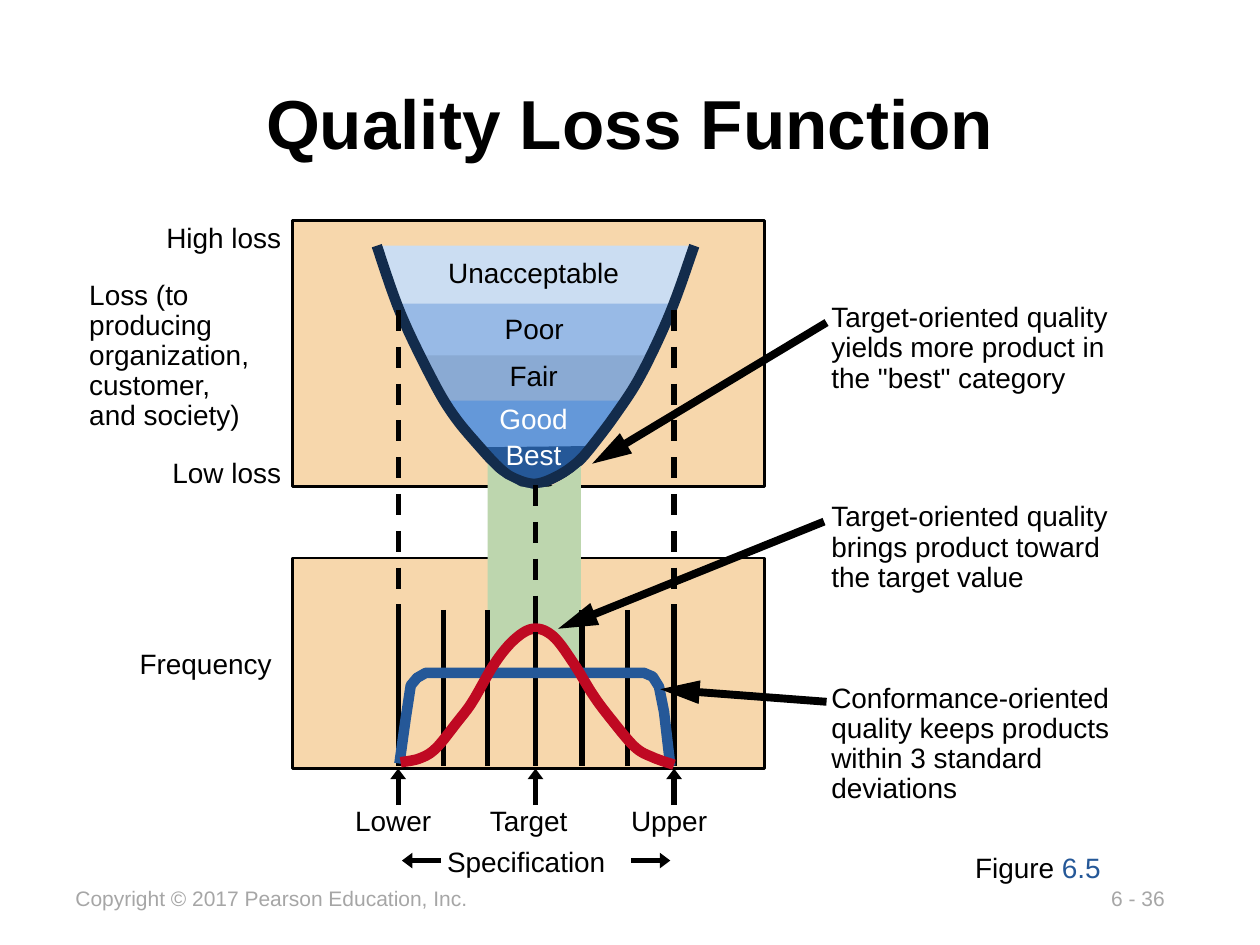
from lxml import etree
from pptx import Presentation
from pptx import util as u
from pptx.dml.color import RGBColor
from pptx.enum import dml, shapes, text
from pptx.oxml.ns import qn

SCALE = 9144  # EMU per px, 100 px to the inch
FONT = "Arial"

BLACK = RGBColor(0x00, 0x00, 0x00)
WHITE = RGBColor(0xFF, 0xFF, 0xFF)
GREY = RGBColor(0xA6, 0xA6, 0xA6)
SAND = RGBColor(0xF7, 0xD7, 0xAC)
GREEN = RGBColor(0xBD, 0xD6, 0xAE)
NAVY = RGBColor(0x13, 0x2C, 0x4C)
BLUE = RGBColor(0x25, 0x58, 0x98)
RED = RGBColor(0xBF, 0x09, 0x22)

LEFT, CENTER, RIGHT = text.PP_ALIGN.LEFT, text.PP_ALIGN.CENTER, text.PP_ALIGN.RIGHT

TITLE = ("Quality Loss Function", (75, 58, 850, 78))
LOSS_PANEL = (232, 175, 375, 211)
FREQUENCY_PANEL = (232, 443, 375, 167)

# label, label colour, label box, band colour, outline
BANDS = [
    ("Unacceptable", BLACK, (345, 198, 157, 37), RGBColor(0xCB, 0xDD, 0xF2),
     [(300, 195), (551, 195), (535, 242), (314, 242)]),
    ("Poor", BLACK, (390, 242, 68, 37), RGBColor(0x98, 0xBA, 0xE6),
     [(315, 241), (535, 241), (516, 284), (335, 284)]),
    ("Fair", BLACK, (393, 280, 61, 37), RGBColor(0x8A, 0xAA, 0xD3),
     [(333, 282), (519, 282), (495, 321), (355, 321)]),
    ("Good", WHITE, (386, 314, 75, 37), RGBColor(0x64, 0x98, 0xD9),
     [(355, 318), (496, 318), (468, 357), (382, 357)]),
    ("Best", WHITE, (391, 342, 65, 37), BLUE,
     [(383, 355), (396, 371), (412, 382), (425, 384), (443, 379), (460, 366),
      (470, 354)]),
]
LOSS_CURVE = [(299, 195), (318, 249), (344, 303), (361, 331), (381, 355),
              (397, 372), (409, 380), (425, 384), (442, 378), (457, 368),
              (469, 355), (490, 327), (509, 297), (532, 248), (551, 195)]
BEST_COLUMN = [(387, 368), (387, 533), (406, 510), (418, 498), (425, 499),
               (441, 507), (450, 521), (461, 535), (461, 370), (455, 375),
               (449, 379), (444, 382), (437, 386), (430, 387), (423, 388),
               (413, 386), (401, 380), (394, 375)]
CONFORMANCE_CURVE = [(317, 606), (322, 570), (326, 544), (331, 538), (338, 534),
                     (511, 534), (518, 537), (523, 545), (527, 565), (532, 608)]
TARGET_CURVE = [(318, 605), (333, 602), (346, 594), (363, 573), (375, 557),
                (393, 526), (409, 507), (424, 499), (439, 505), (455, 526),
                (471, 552), (486, 572), (504, 593), (518, 601), (535, 607)]

LOWER, TARGET, UPPER = 316, 425, 535
DEVIATIONS = [LOWER, 352, 387, TARGET, 462, 498, UPPER]

# text, box, alignment, line spacing, wrap
LABELS = [
    ("High loss", (105, 170, 128, 37), RIGHT, 1, False),
    ("Loss (to producing organization, customer,\vand society)",
     (61, 218, 159, 131), LEFT, 0.9, True),
    ("Low loss", (126, 357, 107, 37), RIGHT, 1, False),
    ("Frequency", (101, 508, 126, 37), LEFT, 1, False),
    ("Lower", (272, 633, 81, 37), LEFT, 1, False),
    ("Target", (379, 633, 83, 37), LEFT, 1, False),
    ("Upper", (491, 633, 81, 37), LEFT, 1, False),
    ("Specification", (345, 665, 147, 37), LEFT, 1, False),
]
# text, box, arrow start, arrow end
CALLOUTS = [
    ('Target-oriented quality yields more product in the "best" category',
     (650, 236, 262, 82), (656, 256), (470, 368)),
    ("Target-oriented quality brings product toward the target value",
     (650, 394, 265, 82), (654, 414), (443, 499)),
    ("Conformance-oriented quality keeps products within 3 standard deviations",
     (650, 538, 273, 107), (656, 557), (524, 547)),
]
FIGURE = ("Figure ", "6.5", (764, 673, 121, 35))
FOOTERS = [("Copyright © 2017 Pearson Education, Inc.", (50, 698, 335, 30)),
           ("6 - 36", (872, 698, 65, 30))]


def px(*lengths):
    return [round(length * SCALE) for length in lengths]


def smooth(knots, steps=8):
    """Points of a Catmull-Rom curve through the knots."""
    padded = [knots[0], *knots, knots[-1]]
    points = [knots[0]]
    for a, b, c, d in zip(padded, padded[1:], padded[2:], padded[3:]):
        for t in (step / steps for step in range(1, steps + 1)):
            points.append(tuple(
                (2 * q + (r - p) * t + (2 * p - 5 * q + 4 * r - s) * t ** 2
                 + (3 * q - p - 3 * r + s) * t ** 3) / 2
                for p, q, r, s in zip(a, b, c, d)))
    return points


def paint(shape, fill, line, width):
    shape.shadow.inherit = False
    if fill is None:
        shape.fill.background()
    else:
        shape.fill.solid()
        shape.fill.fore_color.rgb = fill
    if line is None:
        shape.line.fill.background()
    else:
        shape.line.color.rgb = line
        shape.line.width = u.Pt(width)


def add_outline(points, fill=None, line=None, width=6):
    """A filled area is closed; a drawn curve stays open."""
    start, *rest = [px(*point) for point in points]
    builder = slide.shapes.build_freeform(*start)
    builder.add_line_segments(rest, close=fill is not None)
    paint(builder.convert_to_shape(), fill, line, width)


def add_panel(box):
    panel = slide.shapes.add_shape(shapes.MSO_SHAPE.RECTANGLE, *px(*box))
    paint(panel, SAND, BLACK, 1.5)


def add_line(start, end, width=3, dashed=False, head_length=None):
    connector = slide.shapes.add_connector(
        shapes.MSO_CONNECTOR.STRAIGHT, *px(*start, *end))
    connector.line.color.rgb = BLACK
    connector.line.width = u.Pt(width)
    if dashed:
        connector.line.dash_style = dml.MSO_LINE.DASH
    if head_length:
        etree.SubElement(connector.line._get_or_add_ln(), qn("a:tailEnd"),
                         type="triangle", w="med", len=head_length)
    etree.SubElement(connector._element.spPr, qn("a:effectLst"))


def style(font, **values):
    color = values.pop("color")
    for name, value in values.items():
        setattr(font, name, value)
    font.color.rgb = color


def add_text(words, box, align=LEFT, spacing=1, wrap=False, size=16, color=BLACK):
    frame = slide.shapes.add_textbox(*px(*box)).text_frame
    frame.word_wrap = wrap
    paragraph = frame.paragraphs[0]
    paragraph.text = words
    paragraph.alignment = align
    paragraph.line_spacing = spacing
    for run in paragraph.runs:
        style(run.font, name=FONT, size=u.Pt(size), color=color)
    return paragraph


prs = Presentation()
prs.slide_width, prs.slide_height = px(1000, 750)
slide = prs.slides.add_slide(prs.slide_layouts[5])

title = slide.shapes.title
title.left, title.top, title.width, title.height = px(*TITLE[1])
title.text_frame.text = TITLE[0]
title.text_frame.vertical_anchor = text.MSO_ANCHOR.MIDDLE
heading = title.text_frame.paragraphs[0]
heading.alignment = CENTER
style(heading.runs[0].font, name=FONT, size=u.Pt(39.6), bold=True, color=BLACK)

for words, box in FOOTERS:
    add_text(words, box, size=12, color=GREY)

add_panel(LOSS_PANEL)
for _, _, _, fill, outline in BANDS:
    add_outline(outline, fill=fill)
add_outline(smooth(LOSS_CURVE), line=NAVY)
for words, color, box, _, _ in BANDS:
    add_text(words, box, align=CENTER, color=color)

add_panel(FREQUENCY_PANEL)
add_outline(BEST_COLUMN, fill=GREEN)
for x in (LOWER, UPPER):
    add_line((x, 246), (x, 486), dashed=True)
for x in DEVIATIONS:
    add_line((x, 484), (x, 608))
for x in (LOWER, TARGET, UPPER):
    add_line((x, 639), (x, 610), head_length="sm")
for start, end in ((501, 532), (350, 319)):
    add_line((start, 683), (end, 683), head_length="sm")
add_outline(CONFORMANCE_CURVE, line=BLUE)
add_outline(smooth(TARGET_CURVE), line=RED)
add_line((TARGET, 385), (TARGET, 509), dashed=True)

for label in LABELS:
    add_text(*label)
for words, box, start, end in CALLOUTS:
    add_line(start, end, width=4.5, head_length="lg")
    add_text(words, box, spacing=0.9, wrap=True)

caption, number, box = FIGURE
number_run = add_text(caption, box, spacing=0.9).add_run()
number_run.text = number
style(number_run.font, name=FONT, size=u.Pt(16), color=BLUE)

prs.save("out.pptx")
